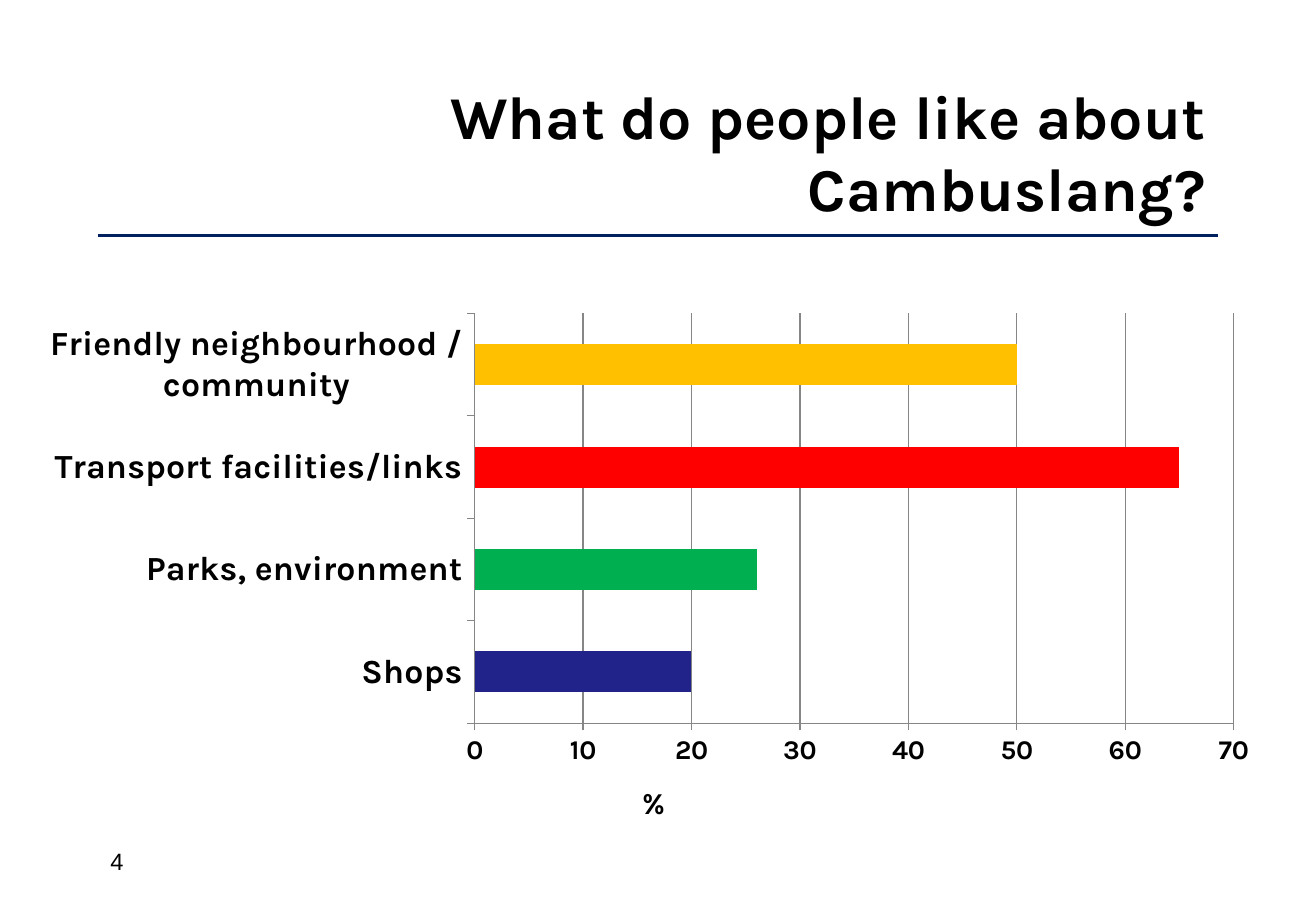
import pptx
import pptx.util
import pptx.chart.data
import pptx.dml.color
import pptx.enum.chart
import pptx.enum.shapes
import pptx.enum.text
import pptx.oxml
import pptx.oxml.ns
from pptx.util import Inches

deck = pptx.Presentation()
deck.slide_width, deck.slide_height = Inches(10.83), Inches(7.5)
slide = deck.slides.add_slide(deck.slide_layouts[6])


def color(code):
    return pptx.dml.color.RGBColor.from_string(code)


def write(text, left, top, width, height, size, font, bold=False,
          align="LEFT", anchor="TOP"):
    frame = slide.shapes.add_textbox(
        Inches(left), Inches(top), Inches(width), Inches(height)).text_frame
    frame.word_wrap = True
    frame.vertical_anchor = getattr(pptx.enum.text.MSO_ANCHOR, anchor)
    para = frame.paragraphs[0]
    para.alignment = getattr(pptx.enum.text.PP_ALIGN, align)
    run = para.add_run()
    run.text = text
    run.font.size, run.font.bold = pptx.util.Pt(size), bold
    run.font.name, run.font.color.rgb = font, color("000000")


# Rule, title and page number
rule = slide.shapes.add_connector(
    pptx.enum.shapes.MSO_CONNECTOR.STRAIGHT,
    Inches(0.81), Inches(1.94), Inches(10.02), Inches(1.94))
rule.line.color.rgb, rule.line.width = color("002060"), pptx.util.Pt(2)
rule._element.spPr.append(pptx.oxml.parse_xml(
    f'<a:effectLst {pptx.oxml.ns.nsdecls("a")}/>'))
write("What do people like about Cambuslang?", 0.81, 0.58, 9.21, 1.33,
      36, "Karla", bold=True, align="RIGHT", anchor="MIDDLE")
write("4", 0.81, 6.92, 0.9, 0.33, 14, "Arial")

# Bar chart, categories from bottom to top
bars = [("Shops", 20, "22228B"),
        ("Parks, environment", 26, "00B050"),
        ("Transport facilities/links", 65, "FF0000"),
        ("Friendly neighbourhood / community", 50, "FFC000")]
data = pptx.chart.data.CategoryChartData()
data.categories = [name for name, value, fill in bars]
data.add_series("Series 1", [value for name, value, fill in bars])
chart = slide.shapes.add_chart(
    pptx.enum.chart.XL_CHART_TYPE.BAR_CLUSTERED, Inches(0.22), Inches(2.49),
    Inches(10.24), Inches(4.5), data).chart
chart.has_legend = chart.has_title = False
chart.font.name, chart.font.size = "Karla", pptx.util.Pt(10)
chart.font.color.rgb = color("000000")

plot = chart.plots[0]
plot.gap_width, plot.vary_by_categories = 150, False
for index, (name, value, fill) in enumerate(bars):
    paint = plot.series[0].points[index].format.fill
    paint.solid()
    paint.fore_color.rgb = color(fill)

# Axes
vals = chart.value_axis
for axis, size in ((chart.category_axis, 20), (vals, 16)):
    font = axis.tick_labels.font
    font.size, font.bold, font.name = pptx.util.Pt(size), True, "Karla"
    font.color.rgb = color("000000")
    axis.major_tick_mark = pptx.enum.chart.XL_TICK_MARK.OUTSIDE
    axis.format.line.color.rgb = color("868686")
vals.minimum_scale, vals.maximum_scale, vals.major_unit = 0, 70, 10
vals.has_major_gridlines = True
vals.major_gridlines.format.line.color.rgb = color("868686")
vals.has_title = True
para = vals.axis_title.text_frame.paragraphs[0]
unit = para.add_run()
unit.text = "%"
unit.font.size, unit.font.bold = pptx.util.Pt(18), True
unit.font.name, unit.font.color.rgb = "Karla", color("000000")

# Places of the plot and the unit, as shares of the chart
area = chart._chartSpace.chart.plotArea
title = vals.axis_title._element
places = [(area, 0, '<c:layoutTarget val="inner"/>',
           {"x": 0.36, "y": 0.02, "w": 0.61, "h": 0.75}),
          (title, 1, "", {"x": 0.49, "y": 0.87})]
for part, spot, target, share in places:
    for old in part.findall(pptx.oxml.ns.qn("c:layout")):
        part.remove(old)
    modes = "".join(f'<c:{key}Mode val="edge"/>' for key in "xy")
    sizes = "".join(f'<c:{key} val="{num}"/>' for key, num in share.items())
    part.insert(spot, pptx.oxml.parse_xml(
        f'<c:layout {pptx.oxml.ns.nsdecls("c")}><c:manualLayout>'
        f'{target}{modes}{sizes}</c:manualLayout></c:layout>'))

deck.save("out.pptx")
